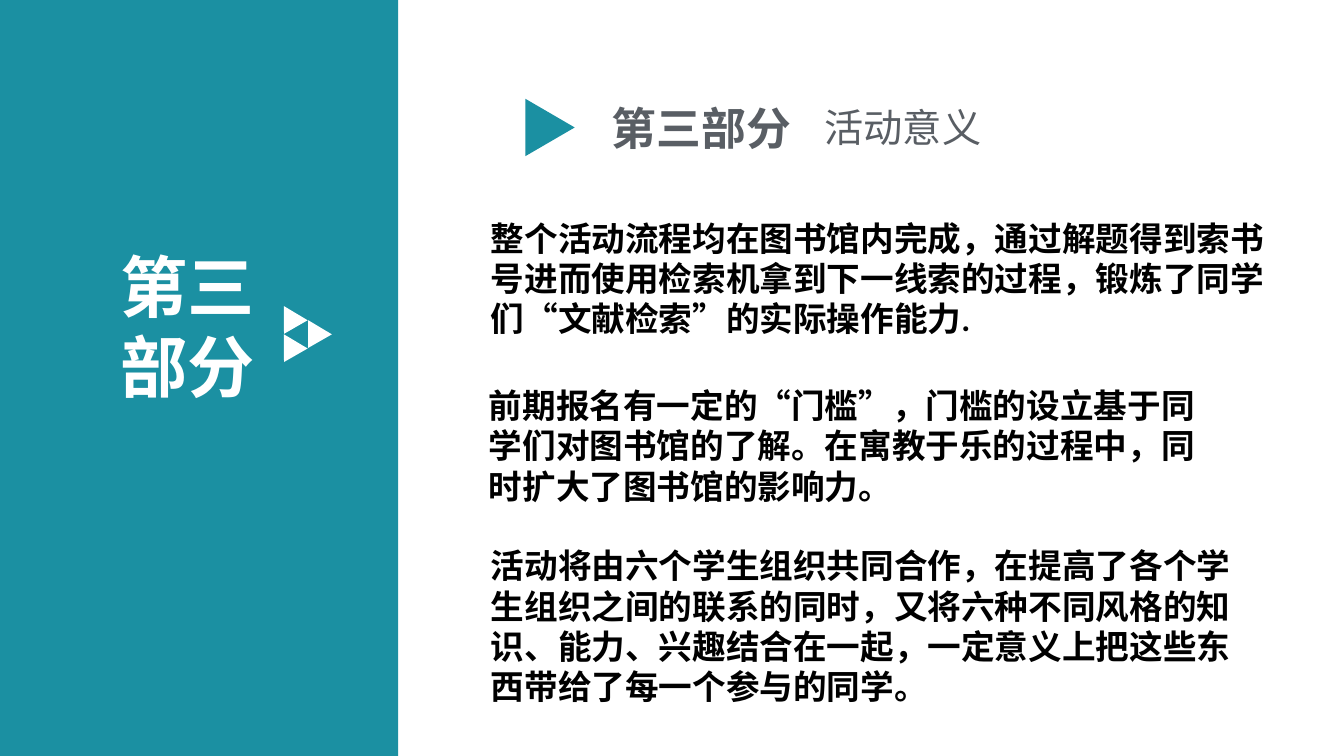
from pptx import Presentation
from pptx.dml.color import RGBColor
from pptx.enum import lang, shapes, text
from pptx.oxml.ns import qn
from pptx.util import Inches, Pt

TEAL, WHITE, GREY, BLACK = "1B90A2", "FFFFFF", "595E64", "000000"
CJK = "Noto Sans CJK SC"
TRIANGLE = shapes.MSO_SHAPE.ISOSCELES_TRIANGLE

BODY = [
    ((4.77, 2.11, 7.9, 1.62),
     "整个活动流程均在图书馆内完成，通过解题得到索书号进而使用检索机拿到下一线索的过程，"
     "锻炼了同学们“文献检索”的实际操作能力."),
    ((4.75, 3.77, 7.42, 1.62),
     "前期报名有一定的“门槛”，门槛的设立基于同学们对图书馆的了解。"
     "在寓教于乐的过程中，同时扩大了图书馆的影响力。"),
    ((4.77, 5.36, 7.67, 2.02),
     "活动将由六个学生组织共同合作，在提高了各个学生组织之间的联系的同时，"
     "又将六种不同风格的知识、能力、兴趣结合在一起，一定意义上把这些东西带给了每一个参与的同学。"),
]


def rgb(color):
    return RGBColor.from_string(color)


def add_block(parent, kind, box, color, rotation=0):
    sp = parent.add_shape(kind, *map(Inches, box))
    sp.shadow.inherit = False
    sp.fill.solid()
    sp.fill.fore_color.rgb = rgb(color)
    sp.line.fill.background()
    sp.rotation = rotation
    return sp


def add_text(parent, box, words, size, color, bold=True, font=CJK):
    tf = parent.add_textbox(*map(Inches, box)).text_frame
    tf.word_wrap = True
    tf.auto_size = text.MSO_AUTO_SIZE.SHAPE_TO_FIT_TEXT
    r = tf.paragraphs[0].add_run()
    r.text = words
    style = {"size": Pt(size), "bold": bold, "name": font,
             "language_id": lang.MSO_LANGUAGE_ID.SIMPLIFIED_CHINESE}
    for key, value in style.items():
        setattr(r.font, key, value)
    r.font.color.rgb = rgb(color)
    east_asian = r._r.get_or_add_rPr().makeelement(qn("a:ea"), {"typeface": CJK})
    r._r.rPr.find(qn("a:latin")).addnext(east_asian)


def add_side_panel(s):
    add_block(s.shapes, shapes.MSO_SHAPE.RECTANGLE, (0, 0, 3.95, 7.5), TEAL)
    add_text(s.shapes, (1.1, 2.38, 1.74, 1.72), "第三部分", 48, WHITE)
    arrow = s.shapes.add_group_shape().shapes
    for left, top in [(2.74, 3.02), (2.74, 3.3), (2.98, 3.16)]:
        add_block(arrow, TRIANGLE, (left, top, 0.27, 0.24), WHITE, 330.2)


def add_heading(s):
    heading = s.shapes.add_group_shape().shapes
    add_block(heading, TRIANGLE, (5.17, 1.02, 0.57, 0.49), TEAL, 90)
    add_text(heading, (5.97, 0.95, 2.11, 0.64), "第三部分", 32, GREY)
    add_text(heading, (8.08, 0.98, 4, 0.57), "活动意义", 28, GREY, bold=False)


def main():
    prs = Presentation()
    prs.slide_width, prs.slide_height = Inches(13.33), Inches(7.5)
    s = prs.slides.add_slide(prs.slide_layouts[6])
    add_side_panel(s)
    add_heading(s)
    for box, words in BODY:
        add_text(s.shapes, box, words, 24, BLACK, font="Calibri")
    prs.save("out.pptx")


if __name__ == "__main__":
    main()
